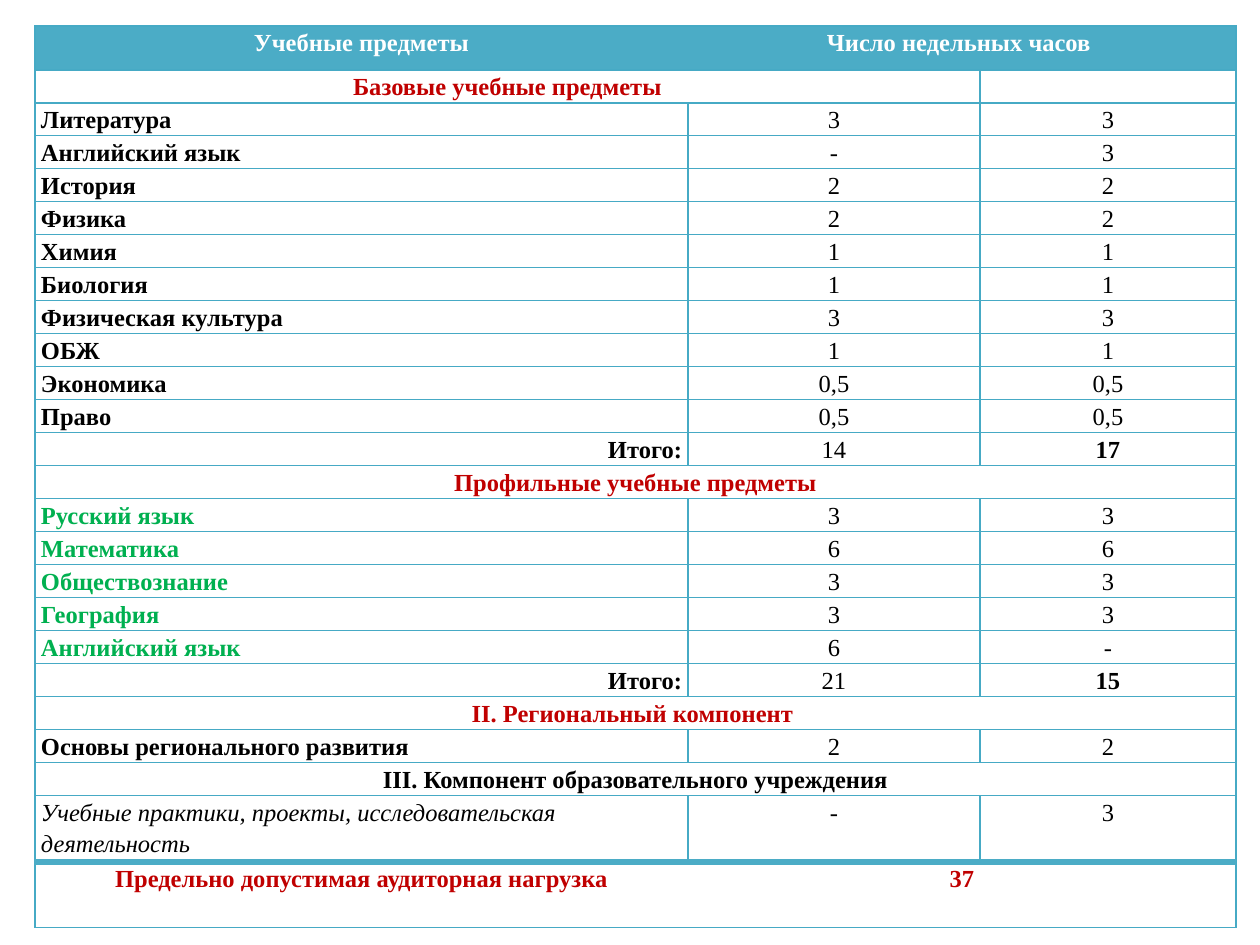
from dataclasses import dataclass

from lxml.etree import SubElement
from pptx import Presentation
from pptx.dml.color import RGBColor
from pptx.enum.text import PP_ALIGN
from pptx.oxml.ns import qn
from pptx.table import Table, _Cell
from pptx.util import Emu, Pt

EMU_PER_PX = 914400 / 126


@dataclass(frozen=True)
class Theme:
    font: str = "Times New Roman"
    size: int = 14
    line_spacing: float = 1.15
    header_fill: str = "4BACC6"
    border: str = "46AAC5"
    border_width: float = 0.75
    heavy_width: float = 4
    white: str = "FFFFFF"
    black: str = "000000"
    red: str = "C00000"
    green: str = "00B050"


THEME = Theme()


@dataclass(frozen=True)
class Label:
    """One cell's text and format, covering `span` columns."""
    text: str
    color: str = THEME.black
    bold: bool = True
    italic: bool = False
    align: PP_ALIGN = PP_ALIGN.CENTER
    span: int = 1


@dataclass(frozen=True)
class Line:
    color: str
    width: float


@dataclass(frozen=True)
class Row:
    labels: tuple[Label, ...]
    height: int = 33


THIN = Line(THEME.border, THEME.border_width)
HEAVY = Line(THEME.header_fill, THEME.heavy_width)


def px(length: int) -> Emu:
    return Emu(round(length * EMU_PER_PX))


def subject(name: str, first: str, second: str, color: str = THEME.black) -> Row:
    return Row((Label(name, color, align=PP_ALIGN.LEFT),
                Label(first, bold=False), Label(second, bold=False)))


def total(first: str, second: str) -> Row:
    return Row((Label("Итого:", align=PP_ALIGN.RIGHT),
                Label(first, bold=False), Label(second)))


def section(title: str, color: str = THEME.red) -> Row:
    return Row((Label(title, color, span=3),))


COLUMNS = (653, 292, 256)
ROWS = (
    Row((Label("Учебные предметы", THEME.white),
         Label("Число недельных часов ", THEME.white, span=2)), 44),
    Row((Label("Базовые учебные предметы", THEME.red, span=2), Label(""))),
    subject("Литература", "3", "3"),
    subject("Английский язык", "-", "3"),
    subject("История", "2", "2"),
    subject("Физика", "2", "2"),
    subject("Химия", "1", "1"),
    subject("Биология", "1", "1"),
    subject("Физическая культура", "3", "3"),
    subject("ОБЖ", "1", "1"),
    subject("Экономика", "0,5", "0,5"),
    subject("Право", "0,5", "0,5"),
    total("14", "17"),
    section("Профильные учебные предметы"),
    subject("Русский язык", "3", "3", THEME.green),
    subject("Математика", "6", "6", THEME.green),
    subject("Обществознание", "3", "3", THEME.green),
    subject("География", "3", "3", THEME.green),
    subject("Английский язык", "6", "-", THEME.green),
    total("21", "15"),
    section("II. Региональный компонент "),
    subject("Основы регионального развития", "2", "2"),
    section("III. Компонент образовательного учреждения", THEME.black),
    Row((Label("Учебные практики, проекты, исследовательская деятельность",
               bold=False, italic=True, align=PP_ALIGN.LEFT),
         Label("-", bold=False), Label("3", bold=False)), 66),
    Row((Label("Предельно допустимая аудиторная нагрузка", THEME.red),
         Label("37", THEME.red, span=2)), 66),
)


def write_text(cell: _Cell, text: str, *, color: str, bold: bool, italic: bool,
               align: PP_ALIGN) -> None:
    para = cell.text_frame.paragraphs[0]
    para.alignment = align
    para.line_spacing = THEME.line_spacing
    span = para.add_run()
    span.text = text
    span.font.name = THEME.font
    span.font.size = Pt(THEME.size)
    span.font.bold = bold
    span.font.italic = italic
    span.font.color.rgb = RGBColor.from_string(color)


def shrink_empty(cell: _Cell) -> None:
    """Keep a cell without text from stretching its row."""
    para = cell.text_frame.paragraphs[0]
    para.line_spacing = THEME.line_spacing
    SubElement(para._p, qn("a:endParaRPr"), sz=str(THEME.size * 100))


def set_borders(cell: _Cell, **lines: Line | None) -> None:
    """Draw the sides L, R, T, B in that order; None hides a side."""
    properties = cell._tc.get_or_add_tcPr()
    for index, (side, line) in enumerate(lines.items()):
        edge = SubElement(properties, qn(f"a:ln{side}"))
        properties.insert(index, edge)
        if line is None:
            SubElement(edge, qn("a:noFill"))
            continue
        edge.set("w", str(Pt(line.width)))
        fill = SubElement(edge, qn("a:solidFill"))
        SubElement(fill, qn("a:srgbClr"), val=line.color)


def format_cell(cell: _Cell, row: int, column: int) -> None:
    last_row = len(ROWS) - 1
    cell.margin_left = cell.margin_right = px(6)
    cell.margin_top = cell.margin_bottom = 0
    if row == 0:
        cell.fill.solid()
        cell.fill.fore_color.rgb = RGBColor.from_string(THEME.header_fill)
    else:
        cell.fill.background()
    open_inside = row in (0, last_row)
    hide_left = cell.is_spanned or (open_inside and column > 0)
    hide_right = open_inside and column == 0
    set_borders(cell,
                L=None if hide_left else THIN,
                R=None if hide_right else THIN,
                T=HEAVY if row == last_row else THIN,
                B=HEAVY if row == last_row - 1 else THIN)


def fill_row(table: Table, index: int, row: Row) -> None:
    table.rows[index].height = px(row.height)
    column = 0
    for label in row.labels:
        cell = table.cell(index, column)
        if label.span > 1:
            cell.merge(table.cell(index, column + label.span - 1))
        if label.text:
            write_text(cell, label.text, color=label.color, bold=label.bold,
                       italic=label.italic, align=label.align)
        column += label.span
    for column in range(len(COLUMNS)):
        cell = table.cell(index, column)
        if not cell.text_frame.text:
            shrink_empty(cell)
        format_cell(cell, index, column)


def main() -> None:
    deck = Presentation()
    deck.slide_width, deck.slide_height = px(1260), px(945)
    page = deck.slides.add_slide(deck.slide_layouts[6])
    table = page.shapes.add_table(
        len(ROWS), len(COLUMNS), px(35), px(26), px(sum(COLUMNS)),
        px(sum(row.height for row in ROWS))).table
    table.first_row = table.horz_banding = False
    for column, width in zip(table.columns, COLUMNS):
        column.width = px(width)
    for index, row in enumerate(ROWS):
        fill_row(table, index, row)
    deck.save("out.pptx")


if __name__ == "__main__":
    main()
